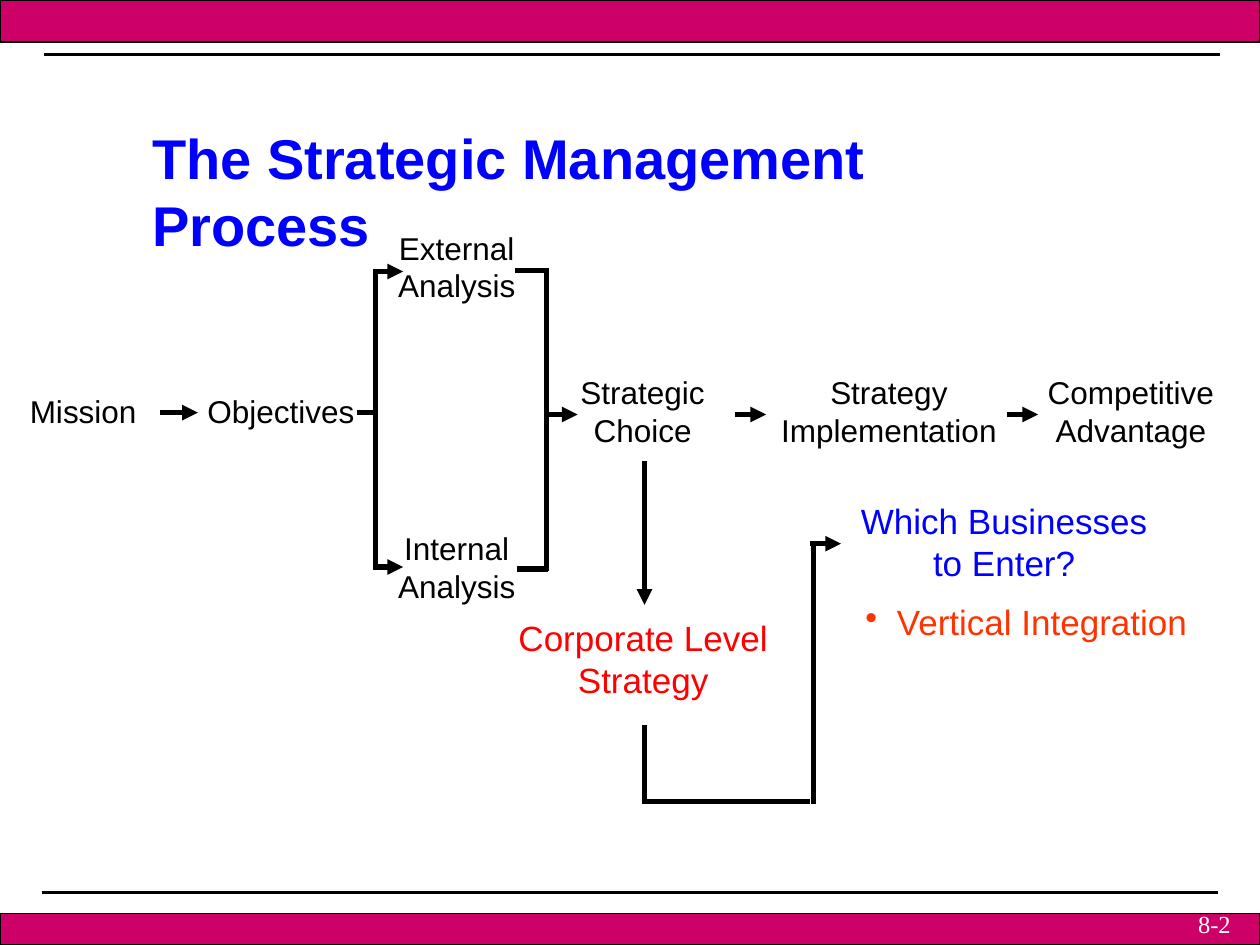
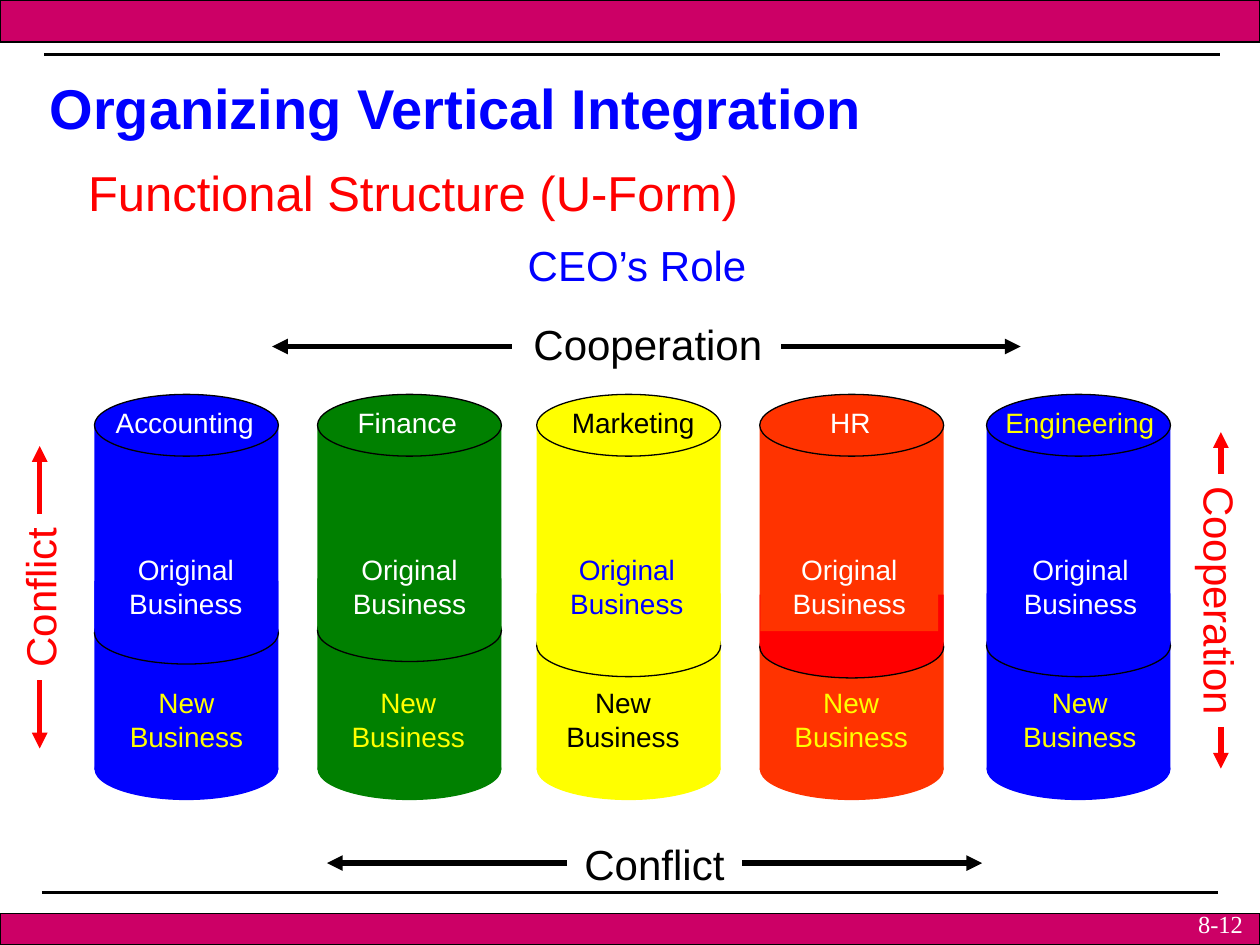
from lxml.etree import SubElement
from pptx import Presentation
from pptx.dml.color import RGBColor
from pptx.enum.shapes import MSO_CONNECTOR as Connector, MSO_SHAPE as Shape
from pptx.enum.text import MSO_ANCHOR as Anchor, PP_ALIGN as Align
from pptx.oxml.ns import qn
from pptx.util import Inches, Pt

paint = RGBColor.from_string
BLUE, RED, ORANGE, GREEN, YELLOW = "0000FF", "FF0000", "FF3300", "008000", "FFFF00"
BLACK, WHITE, BAND = "000000", "FFFFFF", "CC0066"

deck = Presentation()
deck.slide_width, deck.slide_height = Inches(10), Inches(7.5)
CELL = deck.slide_width // 100  # the grid has 100 columns and 75 rows


def place(page, at, text="", size=18, ink=BLACK, kind=None, fill=None, outline=None,
          align=Align.LEFT, bold=False, wrap=False, font="Arial"):
    """Add a text box, or a filled shape if kind is given, at grid cells."""
    spot = [round(cells * CELL) for cells in at]
    if kind is None:
        box = page.shapes.add_textbox(*spot)
    else:
        box = page.shapes.add_shape(kind, *spot)
        box.shadow.inherit = False
        box.fill.solid()
        box.fill.fore_color.rgb = paint(fill)
        if outline:
            box.line.color.rgb = paint(outline)
            box.line.width = Pt(0.75)
        else:
            box.line.fill.background()
    if text:
        frame = box.text_frame
        frame.text = text
        frame.word_wrap = wrap
        frame.vertical_anchor = Anchor.MIDDLE if kind else Anchor.TOP
        for para in frame.paragraphs:
            para.alignment = align
            for span in para.runs:
                span.font.name, span.font.size = font, Pt(size)
                span.font.bold = bold
                span.font.color.rgb = paint(ink)
    return box


def draw_line(page, ends, color=BLACK, weight=3, arrow=False):
    line = page.shapes.add_connector(Connector.STRAIGHT, *[round(cells * CELL) for cells in ends])
    line.line.color.rgb = paint(color)
    line.line.width = Pt(weight)
    properties = line.element.spPr
    if arrow:
        SubElement(properties.find(qn("a:ln")), qn("a:tailEnd"), type="triangle")
    SubElement(properties, qn("a:effectLst"))


# Shared frame and titles
pages = []
for number, title, left, top in [
    ("8-2", "The Strategic Management Process", 11.1, 9.3),
    ("8-12", "Organizing Vertical Integration", 2.95, 5.35),
]:
    page = deck.slides.add_slide(deck.slide_layouts[6])
    draw_line(page, (3.33, 70.83, 96.67, 70.83), weight=1.5)
    draw_line(page, (3.5, 4.33, 96.83, 4.33), weight=1.5)
    for band_top, band_height in [(0, 3.33), (72.5, 2.5)]:
        place(page, (0, band_top, 100, band_height), kind=Shape.RECTANGLE,
              fill=BAND, outline=BLACK)
    place(page, (94.1, 71.65, 5.9, 3.4), number, 14, WHITE, wrap=True, font="Times New Roman")
    place(page, (left, top, 72, 6.3), title, 32, BLUE, bold=True, wrap=True)
    pages.append(page)
process, structure = pages

# Strategic management process
for step, left, top, width, height, size, ink in [
    ("Mission", 1.35, 30.6, 10.5, 4, 18, BLACK),
    ("Objectives", 15.45, 30.6, 13.7, 4, 18, BLACK),
    ("External\nAnalysis", 30.6, 17.65, 11.3, 7, 18, BLACK),
    ("Internal\nAnalysis", 30.6, 41.5, 11.3, 7, 18, BLACK),
    ("Strategic\nChoice", 45.05, 29.1, 11.9, 7, 18, BLACK),
    ("Strategy\nImplementation", 61, 29.1, 19.1, 7, 18, BLACK),
    ("Competitive\nAdvantage", 82.15, 29.1, 15.2, 7, 18, BLACK),
    ("Corporate Level\nStrategy", 40.15, 48.4, 21.8, 7.7, 20, RED),
    ("Which Businesses\nto Enter?", 66.7, 39.15, 26, 7.7, 20, BLUE),
]:
    place(process, (left, top, width, height), step, size, ink, align=Align.CENTER)

topic = place(process, (67.7, 47.2, 29, 4.3), "Vertical Integration", 20, ORANGE, wrap=True)
bullet = topic.text_frame.paragraphs[0]._p.get_or_add_pPr()
bullet.set("marL", str(Inches(0.25)))
bullet.set("indent", str(-Inches(0.25)))
SubElement(bullet, qn("a:buChar"), char="•")

for segment in [
    (28.35, 32.75, 29.7, 32.75), (29.8, 21.4, 29.8, 45.1),
    (43.4, 21.3, 43.4, 45.3), (40.9, 21.45, 43.4, 21.45), (41, 45.15, 43.5, 45.15),
    (51.15, 57.5, 51.15, 63.4), (50.95, 63.6, 64.3, 63.6), (64.55, 63.8, 64.55, 43),
]:
    draw_line(process, segment)
for segment in [
    (12.7, 32.75, 15.7, 32.75), (29.6, 21.55, 32, 21.55), (29.6, 45, 32, 45),
    (43.4, 32.9, 45.85, 32.9), (58.3, 32.9, 60.8, 32.9), (79.9, 32.9, 82.4, 32.9),
    (51.15, 36.6, 51.15, 48), (64.3, 43.15, 66.75, 43.15),
]:
    draw_line(process, segment, arrow=True)

# Functional structure
place(structure, (6, 12.4, 53.8, 5.7), "Functional Structure (U-Form)", 28, RED)
place(structure, (40.9, 18.5, 19.4, 5), "CEO’s Role", 24, BLUE)

PILLAR, CAP = 14.6, 4.9
# name, pillar left, name left and width, original left, new left, seam top,
# fill, seam fill, name ink, original ink, new ink
for (name, left, name_left, name_width, original_left, new_left, seam,
     fill, seam_fill, name_ink, original_ink, new_ink) in [
    ("Accounting", 7.5, 8.2, 13, 7.7, 9.3, 47.8, BLUE, BLUE, WHITE, WHITE, YELLOW),
    ("Finance", 25.2, 27.4, 9.9, 25.45, 26.9, 47.6, GREEN, GREEN, WHITE, WHITE, YELLOW),
    ("Marketing", 42.6, 44.4, 11.8, 42.7, 43.95, 48.8, YELLOW, YELLOW, BLACK, BLUE, BLACK),
    ("HR", 60.3, 64.9, 5.2, 60.35, 62.05, 48.9, ORANGE, RED, WHITE, WHITE, YELLOW),
    ("Engineering", 78.3, 78.8, 13.8, 78.7, 80.2, 48.8, BLUE, BLUE, YELLOW, WHITE, YELLOW),
]:
    for kind, top, height, color, outline in [
        (Shape.RECTANGLE, 33.8, 27.3, fill, None),
        (Shape.OVAL, 31.3, CAP, fill, BLACK),
        (Shape.OVAL, 58.6, CAP, fill, None),
        (Shape.OVAL, seam, CAP, seam_fill, BLACK),
        (Shape.RECTANGLE, seam - 1.7, 4.1, seam_fill, None),
    ]:
        place(structure, (left, top, PILLAR, height), kind=kind, fill=color, outline=outline)
    place(structure, (original_left, 43, 14.1, 7.1), "Original\nBusiness", 16, original_ink,
          kind=Shape.RECTANGLE, fill=fill, align=Align.CENTER)
    place(structure, (name_left, 31.7, name_width, 3.7), name, 16, name_ink)
    place(structure, (new_left, 53.95, 11, 6.4), "New\nBusiness", 16, new_ink, align=Align.CENTER)

# Forces around the pillars
for force, left, top, width, turn, ink, arrows in [
    ("Cooperation", 41.35, 24.8, 20.2, 0, BLACK,
     [(62, 27.5, 81, 27.5), (40.6, 27.5, 21.6, 27.5)]),
    ("Conflict", 45.4, 66.05, 13.3, 0, BLACK,
     [(58.9, 68.5, 77.95, 68.5), (45, 68.5, 25.95, 68.5)]),
    ("Conflict", -3.4, 44.9, 13.1, 270, RED,
     [(3.15, 54, 3.15, 59.4), (3.15, 40.8, 3.15, 35.4)]),
    ("Cooperation", 86.75, 45.2, 20.2, 90, RED,
     [(96.9, 57.7, 96.9, 61), (96.9, 37.6, 96.9, 34.3)]),
]:
    place(structure, (left, top, width, 5), force, 24, ink).rotation = turn
    for arrow in arrows:
        draw_line(structure, arrow, ink, arrow=True)

deck.save("out.pptx")
